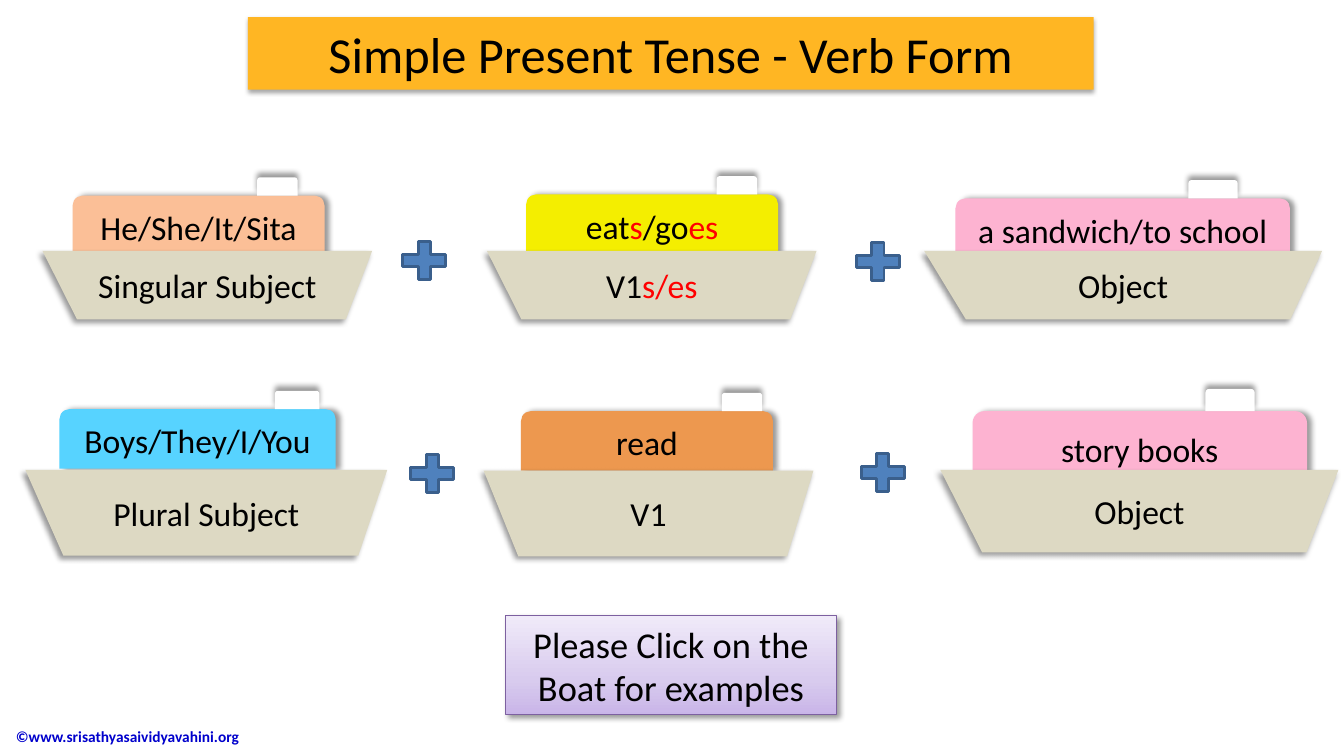
from typing import NamedTuple

from pptx import Presentation
from pptx.dml.color import RGBColor
from pptx.enum.shapes import MSO_SHAPE as SHAPE
from pptx.enum.text import MSO_ANCHOR as ANCHOR, PP_ALIGN as ALIGN
from pptx.oxml import parse_xml
from pptx.oxml.ns import nsdecls, qn
from pptx.util import Cm, Pt

BLACK, RED, WHITE = "000000", "FF0000", "FFFFFF"
HULL, PINK = "DDD9C3", "FDB3D1"


class Boat(NamedTuple):
    """Boxes are left, top, width, height in cm; the funnel is left, width, height."""
    hull: tuple
    cabin: tuple
    funnel: tuple
    fill: str
    example: list
    role: list


BOATS = [
    Boat((1.07, 6.32, 8.31, 1.73), (1.83, 4.93, 6.35, 1.5), (6.48, 1.02, 0.46),
         "FBBF97", [("He/She/It/Sita", BLACK)], [("Singular Subject", BLACK)]),
    Boat((12.27, 6.32, 8.31, 1.73), (13.26, 4.9, 6.35, 1.5), (18.06, 1.02, 0.46),
         "F4EE00", [("eat", BLACK), ("s", RED), ("/go", BLACK), ("es", RED)],
         [("V1", BLACK), ("s/es", RED)]),
    Boat((23.29, 6.32, 10.03, 1.73), (24.08, 5, 8.43, 1.5), (29.95, 1.24, 0.46),
         PINK, [("a sandwich/to school", BLACK)], [("Object", BLACK)]),
    Boat((0.64, 11.84, 9.12, 2.16), (1.5, 10.31, 6.96, 1.5), (6.93, 1.12, 0.46),
         "57D3FF", [("Boys/They/I/You", BLACK)], [("Plural Subject", BLACK)]),
    Boat((12.19, 11.86, 8.31, 2.16), (13.13, 10.36, 6.35, 1.5), (18.19, 1.02, 0.46),
         "ED984F", [("read", BLACK)], [("V1", BLACK)]),
    Boat((23.7, 11.84, 10.03, 2.08), (24.51, 10.36, 8.43, 1.8), (30.38, 1.24, 0.56),
         PINK, [("story books", BLACK)], [("Object", BLACK)]),
]
PLUSES = [(9.96, 5.92), (21.39, 5.94), (10.16, 11.28), (21.51, 11.25)]


def color(hex_text):
    return RGBColor.from_string(hex_text)


def write(sp, runs, size=24, bold=False, align=ALIGN.CENTER):
    """Fill the shape with one paragraph of (text, colour) runs."""
    tf = sp.text_frame
    tf.word_wrap = True
    tf.vertical_anchor = ANCHOR.MIDDLE
    p = tf.paragraphs[0]
    p.alignment = align
    for text, hex_text in runs:
        r = p.add_run()
        r.text = text
        r.font.name = "Calibri"
        r.font.size = Pt(size)
        r.font.bold = bold
        r.font.color.rgb = color(hex_text)
    return p


def paint(sp, fill, line=None, width=1):
    sp.shadow.inherit = False
    sp.fill.solid()
    sp.fill.fore_color.rgb = color(fill)
    if line:
        sp.line.color.rgb = color(line)
        sp.line.width = Pt(width)
    else:
        sp.line.fill.background()
    return sp


def cast_shadow(sp, angle, alpha=40, blur=4, distance=3):
    sp._element.spPr.find(qn("a:effectLst")).append(parse_xml(
        f'<a:outerShdw {nsdecls("a")} blurRad="{Pt(blur)}" dist="{Pt(distance)}" '
        f'dir="{angle * 60000}" rotWithShape="0"><a:srgbClr val="{BLACK}">'
        f'<a:alpha val="{alpha * 1000}"/></a:srgbClr></a:outerShdw>'))


def shade(sp, stops, angle):
    """Give the shape a linear gradient of (percent, colour) stops."""
    sp.fill.gradient()
    sp.fill.gradient_angle = angle
    gs_list = sp._element.spPr.find(".//" + qn("a:gsLst"))
    for stop in list(gs_list):
        gs_list.remove(stop)
    for percent, hex_text in stops:
        gs_list.append(parse_xml(
            f'<a:gs {nsdecls("a")} pos="{percent * 1000}">'
            f'<a:srgbClr val="{hex_text}"/></a:gs>'))


def add_box(s, kind, box, fill, line=None, width=1):
    sp = s.shapes.add_shape(kind, *map(Cm, box))
    return paint(sp, fill, line, width)


def add_hull(s, box):
    """Draw a trapezoid whose lower corners are drawn in by a share of its width."""
    x, y, w, h = box
    corners = [(x + w, y), (x + 0.92 * w, y + h), (x + 0.105 * w, y + h)]
    outline = s.shapes.build_freeform(Cm(x), Cm(y))
    outline.add_line_segments([(Cm(a), Cm(b)) for a, b in corners], close=True)
    return paint(outline.convert_to_shape(), HULL)


def add_boat(s, boat):
    cabin = add_box(s, SHAPE.ROUND_2_SAME_RECTANGLE, boat.cabin, boat.fill)
    cast_shadow(cabin, 0)
    write(cabin, boat.example)
    x, w, h = boat.funnel
    funnel = add_box(s, SHAPE.ROUND_2_SAME_RECTANGLE,
                     (x, boat.cabin[1] - h, w, h), WHITE)
    cast_shadow(funnel, 270)
    hull = add_hull(s, boat.hull)
    cast_shadow(hull, 135)
    write(hull, boat.role)


def add_title(s):
    title = add_box(s, SHAPE.ROUNDED_RECTANGLE, (6.25, 0.43, 21.31, 1.83), "FFB623")
    title.adjustments[0] = 0
    cast_shadow(title, 90, alpha=35, blur=3.1, distance=1.8)
    write(title, [("Simple Present Tense - Verb Form", BLACK)], size=36)


def add_hint(s):
    hint = add_box(s, SHAPE.RECTANGLE, (12.75, 15.52, 8.33, 2.49), WHITE, "7D60A0", 0.75)
    shade(hint, [(0, "C9B5E8"), (35, "D8CBEE"), (100, "F0EAF9")], 90)
    cast_shadow(hint, 45)
    write(hint, [("Please Click on the Boat for examples", BLACK)], size=26)


def add_footer(s):
    footer = s.shapes.add_textbox(Cm(-1.12), Cm(18.03), Cm(10.24), Cm(1.04))
    p = write(footer, [("©www.srisathyasaividyavahini.org", "0000CC")],
              size=11, bold=True, align=ALIGN.LEFT)
    p._p.get_or_add_pPr().set("marL", str(Cm(1.27)))


def main():
    prs = Presentation()
    prs.slide_width, prs.slide_height = Cm(33.87), Cm(19.05)
    s = prs.slides.add_slide(prs.slide_layouts[6])
    add_footer(s)
    for boat in BOATS:
        add_boat(s, boat)
    for x, y in PLUSES:
        add_box(s, SHAPE.MATH_PLUS, (x, y, 1.47, 1.3), "4F81BD", "3A5F8C", 2)
    add_hint(s)
    add_title(s)
    prs.save("out.pptx")


if __name__ == "__main__":
    main()
